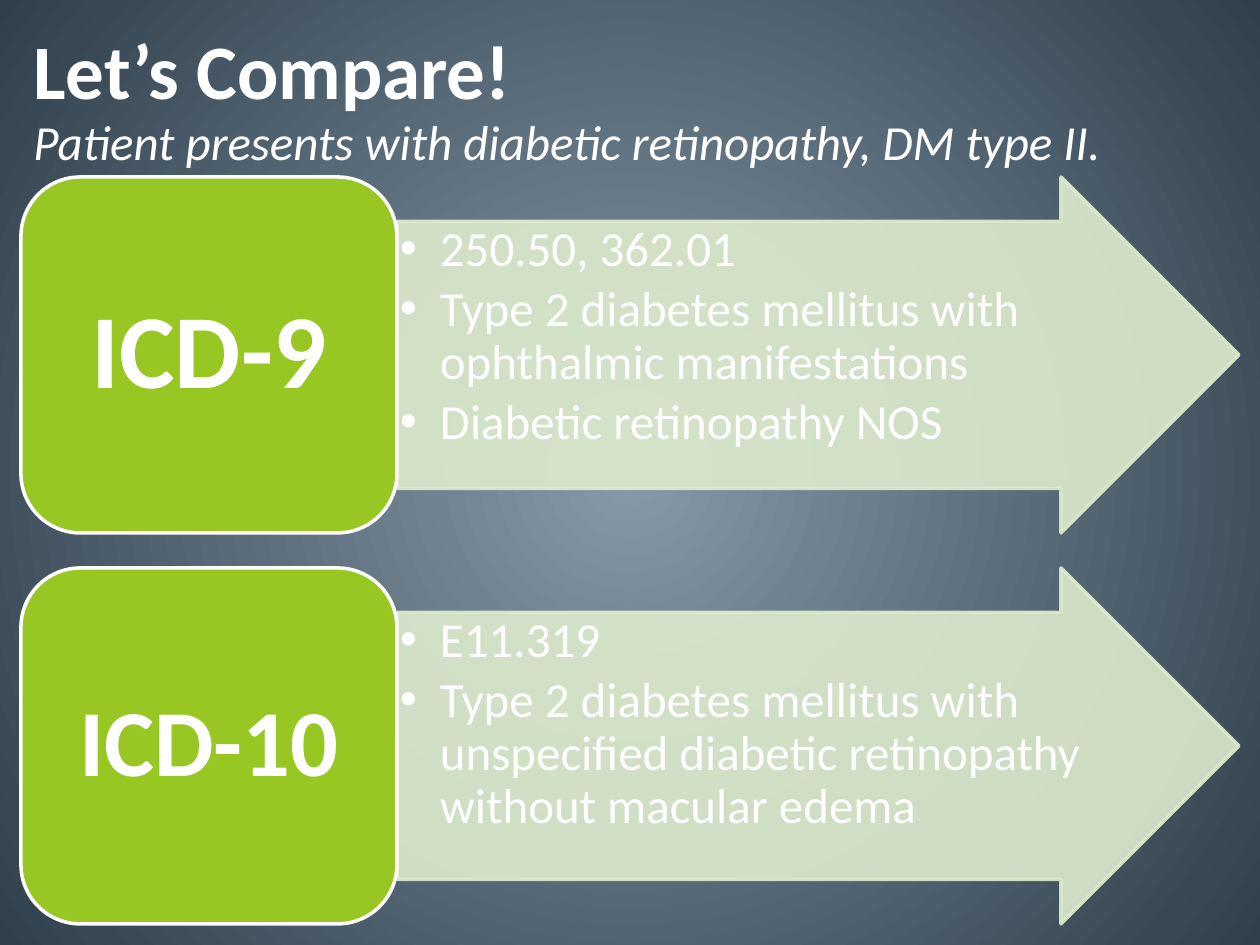
from dataclasses import dataclass

import pptx
import pptx.dml.color
import pptx.enum.shapes
import pptx.enum.text
import pptx.oxml
import pptx.oxml.ns
import pptx.util
from lxml import etree

PX = 914400 // 126
FONT = "Calibri"
HEX = {
    "white": "FFFFFF",
    "green": "98C723",
    "pale": "DDEBCD",
    "glow": "8699A9",
    "edge": "2F3F4B",
}
KIND = pptx.enum.shapes.MSO_SHAPE
ALIGN = pptx.enum.text.PP_ALIGN
ANCHOR = pptx.enum.text.MSO_ANCHOR
TOP, PITCH, HIGH = 177, 391, 356
INDENT, INSET = 40, 3


@dataclass
class Box:
    left: int
    top: int
    width: int
    height: int

    def emu(self) -> list[int]:
        return [n * PX for n in (self.left, self.top, self.width, self.height)]


@dataclass
class Code:
    name: str
    size: int
    notes: list[str]


@dataclass
class Head:
    text: str
    box: Box
    size: int
    bold: bool = False
    italic: bool = False


CODES = [
    Code("ICD-9", 60, [
        "250.50, 362.01",
        "Type 2 diabetes mellitus with ophthalmic manifestations",
        "Diabetic retinopathy NOS",
    ]),
    Code("ICD-10", 54, [
        "E11.319",
        "Type 2 diabetes mellitus with unspecified diabetic retinopathy "
        "without macular edema",
    ]),
]
HEADS = [
    Head("Patient presents with diabetic retinopathy, DM type II.",
         Box(21, 105, 1176, 72), 28, italic=True),
    Head("Let’s Compare!", Box(21, -10, 1134, 158), 44, bold=True),
]


def rgb(name: str):
    return pptx.dml.color.RGBColor.from_string(HEX[name])


def add_node(parent, tag: str, **attrs: str):
    return etree.SubElement(parent, pptx.oxml.ns.qn(tag), **attrs)


def paint_back(slide) -> None:
    """Fill the background with a round glow from the centre."""
    fill = slide.background.fill
    fill.gradient()
    for stop, name, place in zip(fill.gradient_stops, ("glow", "edge"), (0, 1)):
        stop.color.rgb = rgb(name)
        stop.position = place
    grad = next(slide.element.iter(pptx.oxml.ns.qn("a:gradFill")))
    grad.remove(grad.find(pptx.oxml.ns.qn("a:lin")))
    round_fill = add_node(grad, "a:path", path="circle")
    add_node(round_fill, "a:fillToRect", l="50000", t="50000", r="50000", b="50000")


def add_run(para, text: str, size: int, bold=False, italic=False) -> None:
    run = para.add_run()
    run.text = text
    font = run.font
    font.name, font.size = FONT, pptx.util.Pt(size)
    font.bold, font.italic = bold, italic
    font.color.rgb = rgb("white")


def add_form(slide, kind, box: Box, fill: str, line: str):
    form = slide.shapes.add_shape(kind, *box.emu())
    form.shadow.inherit = False
    form.fill.solid()
    form.fill.fore_color.rgb = rgb(fill)
    form.line.color.rgb = rgb(line)
    form.line.width = pptx.util.Pt(2)
    form.text_frame.word_wrap = True
    return form


def add_arrow(slide, box: Box, notes: list[str]) -> None:
    form = add_form(slide, KIND.RIGHT_ARROW, box, "pale", "pale")
    form.adjustments[0], form.adjustments[1] = 0.75, 0.5
    for tint in form.element.spPr.iter(pptx.oxml.ns.qn("a:srgbClr")):
        add_node(tint, "a:alpha", val="90000")
    frame = form.text_frame
    frame.vertical_anchor = ANCHOR.TOP
    frame.margin_left = frame.margin_right = INSET * PX
    frame.margin_top = frame.margin_bottom = INSET * PX
    for i, note in enumerate(notes):
        para = frame.add_paragraph() if i else frame.paragraphs[0]
        para.alignment = ALIGN.LEFT
        para.line_spacing = 0.9
        para.space_after = pptx.util.Pt(4)
        add_run(para, note, 28)
        props = para._p.get_or_add_pPr()
        props.set("marL", str(INDENT * PX))
        props.set("indent", str(-INDENT * PX))
        add_node(props, "a:buFont", typeface="Arial")
        add_node(props, "a:buChar", char="•")


def add_tile(slide, box: Box, code: Code) -> None:
    form = add_form(slide, KIND.ROUNDED_RECTANGLE, box, "green", "white")
    frame = form.text_frame
    frame.vertical_anchor = ANCHOR.MIDDLE
    para = frame.paragraphs[0]
    para.alignment = ALIGN.CENTER
    para.line_spacing = 0.9
    add_run(para, code.name, code.size, bold=True)


def add_head(slide, head: Head) -> None:
    frame = slide.shapes.add_textbox(*head.box.emu()).text_frame
    frame.word_wrap = True
    frame.vertical_anchor = ANCHOR.MIDDLE
    add_run(frame.paragraphs[0], head.text, head.size, head.bold, head.italic)


def main() -> None:
    deck = pptx.Presentation()
    deck.slide_width = pptx.util.Inches(10)
    deck.slide_height = pptx.util.Inches(7.5)
    slide = deck.slides.add_slide(deck.slide_layouts[6])
    paint_back(slide)
    for i, code in enumerate(CODES):
        top = TOP + i * PITCH
        add_arrow(slide, Box(397, top, 842, HIGH), code.notes)
        add_tile(slide, Box(21, top, 376, HIGH), code)
    for head in HEADS:
        add_head(slide, head)
    deck.save("out.pptx")


if __name__ == "__main__":
    main()
